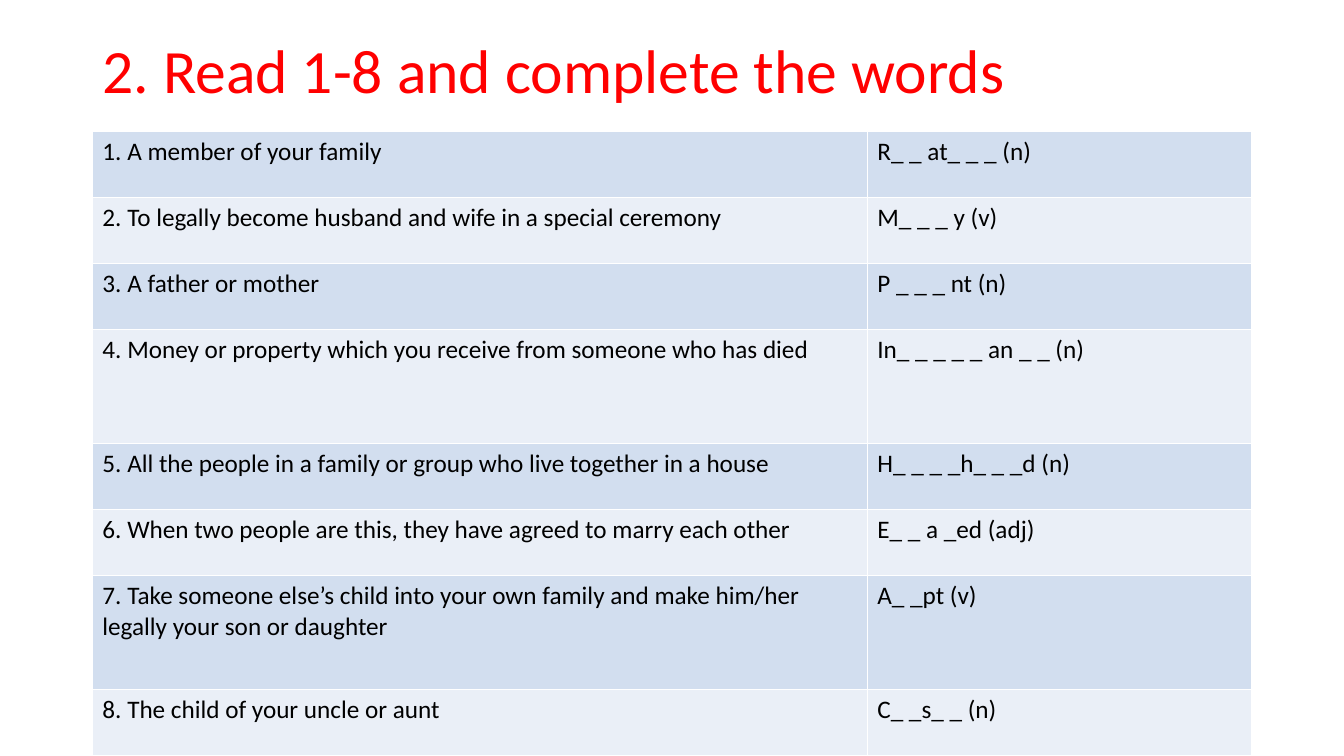
from dataclasses import dataclass

from lxml import etree
from pptx import Presentation
from pptx.dml.color import RGBColor
from pptx.enum import text
from pptx.oxml import ns
from pptx.util import Pt


@dataclass(frozen=True)
class Theme:
    font: str = "Calibri"
    title_size: int = 44
    body_size: int = 18
    title_color: str = "FF0000"
    body_color: str = "000000"
    border_color: str = "FFFFFF"
    border_width: int = 1
    bands: tuple = ("D2DEEF", "EAEFF7")


THEME = Theme()
LEFT, WIDTH = 66, 828
COLUMN_WIDTHS = (553.5, 274.5)
SHORT_ROW, TALL_ROW = 47.15, 81.4
TALL_NUMBERS = (4, 7)
CLUES = (
    ("A member of your family", "R_ _ at_ _ _ (n)"),
    ("To legally become husband and wife in a special ceremony", "M_ _ _ y (v)"),
    ("A father or mother", "P _ _ _ nt (n)"),
    ("Money or property which you receive from someone who has died", "In_ _ _ _ _ an _ _ (n)"),
    ("All the people in a family or group who live together in a house", "H_ _ _ _h_ _ _d (n)"),
    ("When two people are this, they have agreed to marry each other", "E_ _ a _ed (adj)"),
    (
        "Take someone else’s child into your own family and make him/her "
        "legally your son or daughter",
        "A_ _pt (v)",
    ),
    ("The child of your uncle or aunt", "C_ _s_ _ (n)"),
)


def format_paragraph(paragraph, size, color):
    paragraph.alignment = text.PP_ALIGN.LEFT
    paragraph.font.name = THEME.font
    paragraph.font.size = Pt(size)
    paragraph.font.color.rgb = RGBColor.from_string(color)


def set_title(slide, wording):
    title = slide.shapes.title
    title.left, title.top, title.width, title.height = Pt(LEFT), Pt(0), Pt(WIDTH), Pt(104.4)
    frame = title.text_frame
    frame.text = wording
    frame.vertical_anchor = text.MSO_ANCHOR.MIDDLE
    frame.auto_size = text.MSO_AUTO_SIZE.NONE
    paragraph = frame.paragraphs[0]
    paragraph.line_spacing = 0.9
    format_paragraph(paragraph, THEME.title_size, THEME.title_color)


def add_borders(cell):
    properties = cell._tc.get_or_add_tcPr()
    for side in ("lnL", "lnR", "lnT", "lnB"):
        line = etree.SubElement(properties, ns.qn(f"a:{side}"), w=str(Pt(THEME.border_width)))
        fill = etree.SubElement(line, ns.qn("a:solidFill"))
        etree.SubElement(fill, ns.qn("a:srgbClr"), val=THEME.border_color)


def fill_cell(cell, wording, band):
    cell.text = wording
    format_paragraph(cell.text_frame.paragraphs[0], THEME.body_size, THEME.body_color)
    add_borders(cell)
    cell.fill.solid()
    cell.fill.fore_color.rgb = RGBColor.from_string(band)


def add_clue_table(slide):
    heights = [
        TALL_ROW if number in TALL_NUMBERS else SHORT_ROW
        for number in range(1, len(CLUES) + 1)
    ]
    frame = slide.shapes.add_table(
        len(CLUES), len(COLUMN_WIDTHS), Pt(LEFT), Pt(93.9), Pt(WIDTH), Pt(sum(heights))
    )
    table = frame.table
    table.first_row = False
    for column, width in zip(table.columns, COLUMN_WIDTHS):
        column.width = Pt(width)
    for index, (clue, answer) in enumerate(CLUES):
        table.rows[index].height = Pt(heights[index])
        band = THEME.bands[index % 2]
        fill_cell(table.cell(index, 0), f"{index + 1}. {clue}", band)
        fill_cell(table.cell(index, 1), answer, band)


def main():
    presentation = Presentation()
    presentation.slide_width, presentation.slide_height = Pt(960), Pt(540)
    slide = presentation.slides.add_slide(presentation.slide_layouts.get_by_name("Title Only"))
    set_title(slide, "2. Read 1-8 and complete the words")
    add_clue_table(slide)
    presentation.save("out.pptx")


if __name__ == "__main__":
    main()
